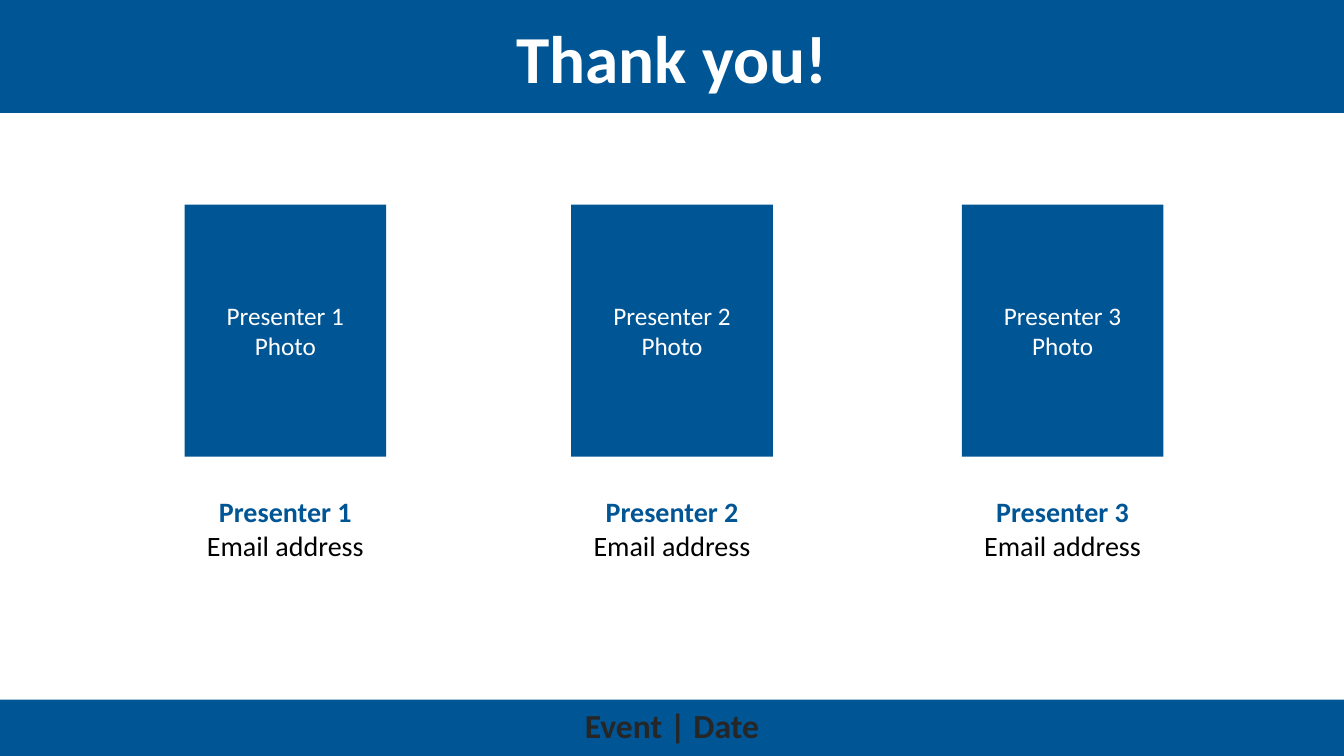
from pptx import Presentation
from pptx.dml.color import RGBColor
from pptx.enum.shapes import MSO_SHAPE
from pptx.enum.text import MSO_ANCHOR, PP_ALIGN
from pptx.util import Inches, Pt

RECT = MSO_SHAPE.RECTANGLE
TOP, MIDDLE = MSO_ANCHOR.TOP, MSO_ANCHOR.MIDDLE
CENTER = PP_ALIGN.CENTER
BLUE, WHITE, BLACK, DARK = "005595", "FFFFFF", "000000", "262626"


def color(code):
    return RGBColor.from_string(code)


class Deck:
    font = "Calibri"

    def __init__(self):
        self.file = Presentation()
        self.file.slide_width = Inches(13.33)
        self.file.slide_height = Inches(7.5)
        self.slide = self.file.slides.add_slide(self.file.slide_layouts[6])

    def place(self, mid, top, wide, high):
        col = self.file.slide_width / 100
        row = self.file.slide_height / 100
        cells = ((mid - wide / 2) * col, top * row, wide * col, high * row)
        return [round(cell) for cell in cells]

    def letter(self, shape, lines, size, anchor):
        frame = shape.text_frame
        frame.word_wrap = True
        frame.vertical_anchor = anchor
        frame.text = "\n".join(text for text, tint, bold in lines)
        for para, (text, tint, bold) in zip(frame.paragraphs, lines):
            para.alignment = CENTER
            font = para.runs[0].font
            font.name, font.size, font.bold = self.font, Pt(size), bold
            font.color.rgb = color(tint)

    def block(self, *area):
        shape = self.slide.shapes.add_shape(RECT, *self.place(*area))
        shape.shadow.inherit = False
        shape.fill.solid()
        shape.fill.fore_color.rgb = color(BLUE)
        shape.line.fill.background()
        return shape

    def label(self, area, lines, size, anchor=TOP):
        box = self.slide.shapes.add_textbox(*self.place(*area))
        self.letter(box, lines, size, anchor)

    def person(self, mid, name):
        photo = self.block(mid, 27.07, 15, 33.33)
        self.letter(photo, [(f"{name} Photo", WHITE, False)], 18, MIDDLE)
        lines = [(name, BLUE, True), ("Email address", BLACK, False)]
        self.label((mid, 64.8, 19.65, 10.27), lines, 20)


def main():
    deck = Deck()
    deck.block(50, 92.53, 100, 7.47)
    deck.block(50, 0, 100, 14.93)
    title = [("Thank you!", WHITE, True)]
    deck.label((50, 0.13, 70.8, 14.8), title, 48, MIDDLE)
    for number, mid in enumerate((21.23, 50, 79.06), 1):
        deck.person(mid, f"Presenter {number}")
    deck.label((50, 92.53, 50.93, 6.67), [("Event | Date", DARK, True)], 24)
    deck.file.save("out.pptx")


if __name__ == "__main__":
    main()
